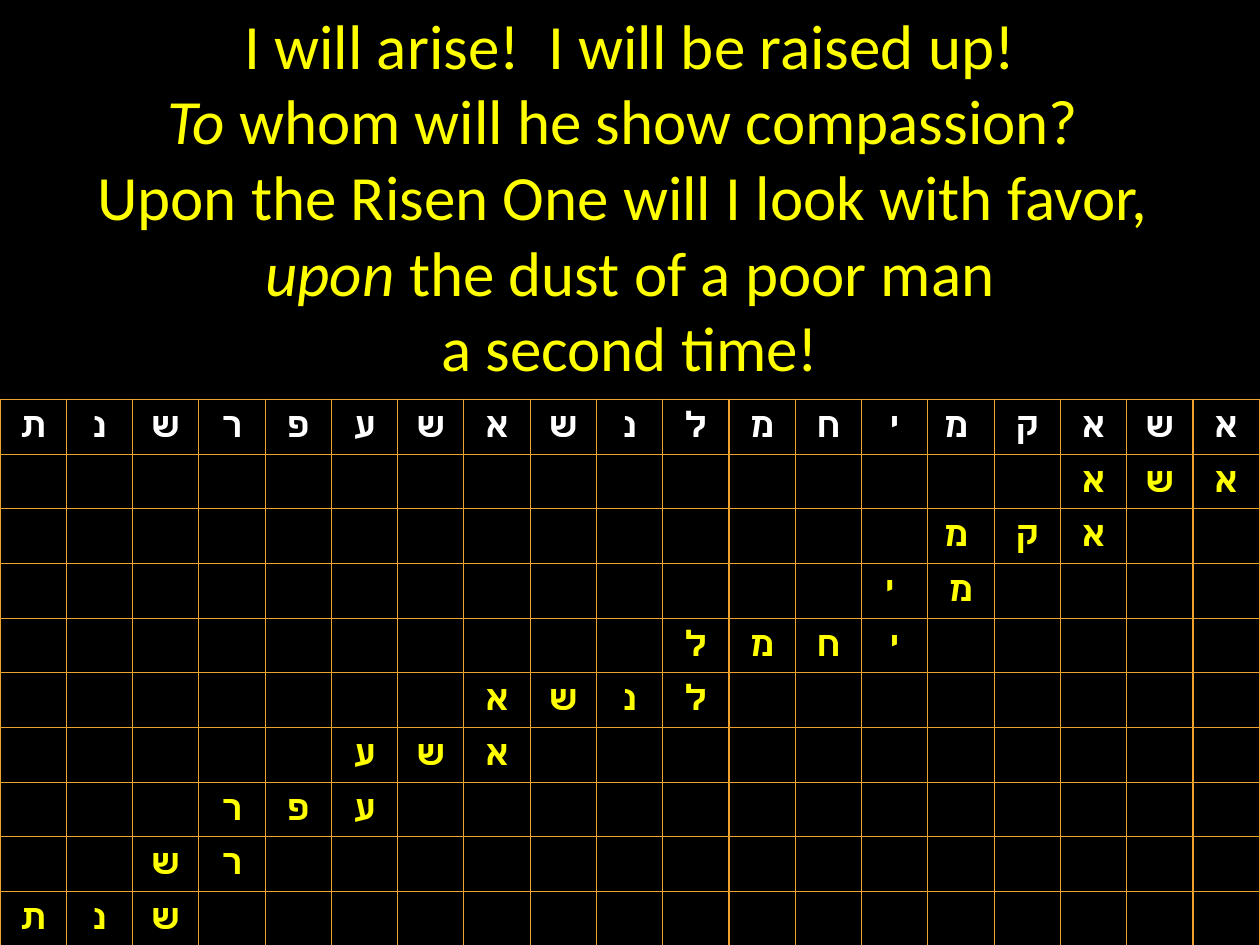
import pptx
import pptx.util
import pptx.dml.color
import pptx.enum.text
import pptx.oxml.ns
from lxml import etree

Inches = pptx.util.Inches
qn = pptx.oxml.ns.qn

# Each verse is a list of (text, italic) spans; None is a line break
VERSES = [
    [("I will arise!  I will be raised up!", False)],
    [("To ", True), ("whom will he show compassion? ", False)],
    [("Upon the Risen One will I look with favor, ", False), None,
     ("upon", True), (" the dust of a poor man", False)],
    [(" a second time! ", False)],
]

# Words run right to left, each starting on the last letter of the one before
LETTERS = "אשאקמיחמלנשאשעפרשנת"
WORD_LENGTHS = [3, 3, 2, 4, 4, 3, 3, 2, 3]
SPACED_CELLS = {(0, 14), (2, 14), (3, 13)}


def color(value):
    return pptx.dml.color.RGBColor.from_string(value)


class SlideBuilder:
    black, white, yellow, gold = "000000", "FFFFFF", "FFFF00", "F0A22E"
    font = "Calibri"
    verse_size, letter_size = 36, 20

    def __init__(self, deck):
        self.page = deck.slides.add_slide(deck.slide_layouts[5])
        self.fill(self.page.background)

    def fill(self, item):
        item.fill.solid()
        item.fill.fore_color.rgb = color(self.black)

    def format(self, span, size, hue, bold=False, italic=False):
        span.font.name = self.font
        span.font.size = pptx.util.Pt(size)
        span.font.color.rgb = color(hue)
        span.font.bold = bold
        span.font.italic = italic

    def title(self, verses, left, top, width, height):
        box = self.page.shapes.title
        box.left, box.top, box.width, box.height = map(Inches, (left, top, width, height))
        self.fill(box)
        frame = box.text_frame
        frame.word_wrap = True
        frame.auto_size = pptx.enum.text.MSO_AUTO_SIZE.SHAPE_TO_FIT_TEXT
        frame.vertical_anchor = pptx.enum.text.MSO_ANCHOR.TOP
        for index, verse in enumerate(verses):
            para = frame.add_paragraph() if index else frame.paragraphs[0]
            para.alignment = pptx.enum.text.PP_ALIGN.CENTER
            for part in verse:
                if part is None:
                    para.add_line_break()
                    # Keep the break at the size of the text
                    etree.SubElement(para._p[-1], qn("a:rPr"), sz=str(self.verse_size * 100))
                    continue
                span = para.add_run()
                span.text, italic = part
                self.format(span, self.verse_size, self.yellow, italic=italic)

    def borders(self, cell):
        properties = cell._tc.get_or_add_tcPr()
        for side in ("a:lnL", "a:lnR", "a:lnT", "a:lnB"):
            line = etree.SubElement(properties, qn(side), w=str(pptx.util.Pt(0.75)))
            paint = etree.SubElement(line, qn("a:solidFill"))
            etree.SubElement(paint, qn("a:srgbClr"), val=self.gold)

    def table(self, rows, left, top, width, row_height):
        count = len(rows[0])
        frame = self.page.shapes.add_table(
            len(rows), count, Inches(left), Inches(top),
            Inches(width), Inches(row_height * len(rows)))
        grid = frame.table
        grid.first_row = grid.horz_banding = False
        for column in grid.columns:
            column.width = Inches(width / count)
        for r, row in enumerate(rows):
            grid.rows[r].height = Inches(row_height)
            for c, text in enumerate(row):
                self.cell(grid.cell(r, c), text, self.yellow if r else self.white)

    def cell(self, cell, text, hue):
        self.borders(cell)
        self.fill(cell)
        cell.vertical_anchor = pptx.enum.text.MSO_ANCHOR.MIDDLE
        para = cell.text_frame.paragraphs[0]
        para.alignment = pptx.enum.text.PP_ALIGN.CENTER
        if text:
            para.text = text
            self.format(para.runs[0], self.letter_size, hue, bold=True)
        else:
            # Empty cells keep the height of the letters
            etree.SubElement(para._p, qn("a:endParaRPr"), sz=str(self.letter_size * 100))


def letter_rows():
    last = len(LETTERS) - 1
    spans = [(0, len(LETTERS))]
    start = 0
    for length in WORD_LENGTHS:
        spans.append((start, start + length))
        start += length - 1
    rows = []
    for r, (first, end) in enumerate(spans):
        row = [""] * len(LETTERS)
        for position in range(first, end):
            column = last - position
            row[column] = LETTERS[position] + (" " if (r, column) in SPACED_CELLS else "")
        rows.append(row)
    return rows


def main():
    deck = pptx.Presentation()
    deck.slide_width, deck.slide_height = Inches(10), Inches(7.5)
    builder = SlideBuilder(deck)
    # Translation above, letter grid below
    builder.title(VERSES, 0, 0, 10, 3.13)
    builder.table(letter_rows(), 0, 3.17, 10, 0.42)
    deck.save("out.pptx")


if __name__ == "__main__":
    main()
